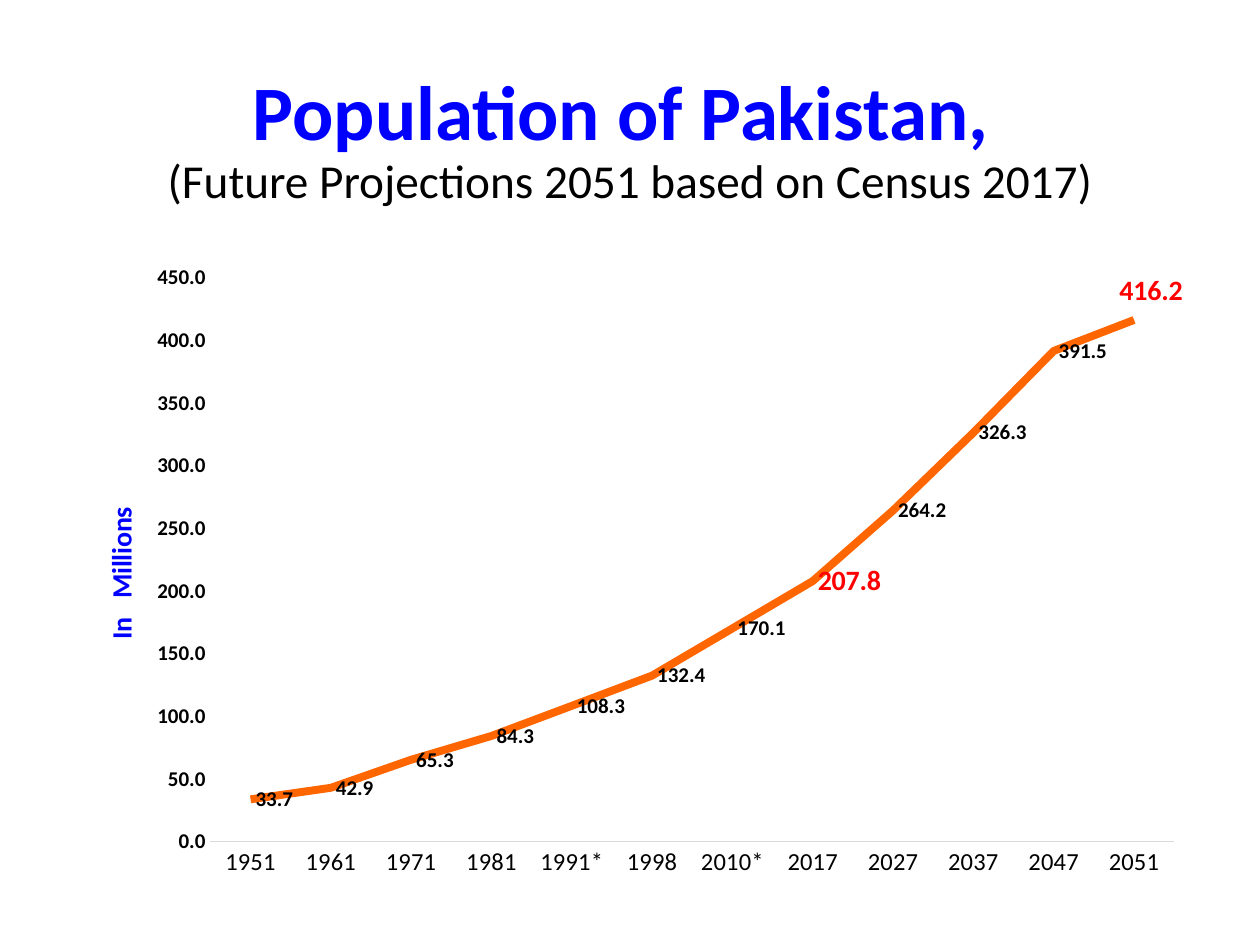
from lxml import etree
from pptx import Presentation
from pptx.chart.data import CategoryChartData
from pptx.dml.color import RGBColor
from pptx.enum.chart import XL_CHART_TYPE, XL_LABEL_POSITION, XL_TICK_MARK
from pptx.enum.text import MSO_ANCHOR, PP_ALIGN
from pptx.oxml.ns import qn
from pptx.util import Emu, Pt

LINE = XL_CHART_TYPE.LINE
RIGHT, ABOVE = XL_LABEL_POSITION.RIGHT, XL_LABEL_POSITION.ABOVE
NO_TICK = XL_TICK_MARK.NONE
CENTER, MIDDLE = PP_ALIGN.CENTER, MSO_ANCHOR.MIDDLE

FACE = "Calibri"
BLUE, BLACK, RED, ORANGE, GREY = "0000FF", "000000", "FF0000", "FF6600", "D9D9D9"
FORMAT = "#,##0.0"

HEAD = "Population of Pakistan, "
SUB = "(Future Projections 2051 based on Census 2017)"
UNIT = "In   Millions"
PEOPLE = [
    ("1951", 33.7), ("1961", 42.9), ("1971", 65.3), ("1981", 84.3),
    ("1991*", 108.3), ("1998", 132.4), ("2010*", 170.1), ("2017", 207.8),
    ("2027", 264.2), ("2037", 326.3), ("2047", 391.5), ("2051", 416.2),
]
MARKED = {"2017": RIGHT, "2051": ABOVE}
TITLE_BOX = (87, 50, 1086, 183)
CHART_BOX = (63, 252, 1134, 641)


def px(n):
    return Emu(int(n * 914400 / 126))


def paint(hue):
    return RGBColor.from_string(hue)


def style(font, size, hue=BLACK, bold=False):
    font.name, font.size, font.bold = FACE, Pt(size), bold
    font.color.rgb = paint(hue)


def write(para, text, **look):
    run = para.add_run()
    run.text = text
    style(run.font, **look)


def place(owner, index, **parts):
    for old in owner.findall(qn("c:layout")):
        owner.remove(old)
    frame = etree.Element(qn("c:layout"))
    manual = etree.SubElement(frame, qn("c:manualLayout"))
    for tag, value in parts.items():
        etree.SubElement(manual, qn("c:" + tag)).set("val", str(value))
    owner.insert(index, frame)


def add_title(slide):
    title = slide.shapes.title
    title.left, title.top, title.width, title.height = map(px, TITLE_BOX)
    frame = title.text_frame
    frame.word_wrap, frame.vertical_anchor = True, MIDDLE
    para = frame.paragraphs[0]
    para.alignment, para.line_spacing = CENTER, 0.9
    write(para, HEAD, size=44, hue=BLUE, bold=True)
    para.add_line_break()
    write(para, SUB, size=27)


def add_axes(chart):
    years, count = chart.category_axis, chart.value_axis
    for axis, size, bold in ((years, 14, False), (count, 12, True)):
        axis.major_tick_mark = axis.minor_tick_mark = NO_TICK
        axis.has_major_gridlines = False
        style(axis.tick_labels.font, size, bold=bold)
    years.format.line.color.rgb = paint(GREY)
    years.format.line.width = Pt(0.75)
    count.format.line.fill.background()
    count.minimum_scale, count.maximum_scale, count.major_unit = 0, 450, 50
    count.tick_labels.number_format = FORMAT
    count.tick_labels.number_format_is_linked = False
    frame = count.axis_title.text_frame
    write(frame.paragraphs[0], UNIT, size=16, hue=BLUE, bold=True)
    frame._txBody.bodyPr.set("rot", "-5400000")
    place(count.axis_title._element, 1, xMode="edge", yMode="edge", x=0.03, y=0.39)


def add_labels(line):
    labels = line.data_labels
    labels.show_value, labels.position = True, RIGHT
    labels.number_format, labels.number_format_is_linked = FORMAT, False
    style(labels.font, 12, bold=True)
    for index, (year, _) in enumerate(PEOPLE):
        if year in MARKED:
            label = line.points[index].data_label
            style(label.font, 16, RED, True)
            label.position = MARKED[year]
    last = line._element.findall(".//" + qn("c:dLbl"))[-1]
    place(last, 1, x=0.015, y=-0.01)


def add_graph(slide):
    data = CategoryChartData(number_format=FORMAT)
    data.categories = [year for year, _ in PEOPLE]
    data.add_series("Series 1", [value for _, value in PEOPLE])
    chart = slide.shapes.add_chart(LINE, *map(px, CHART_BOX), data).chart
    chart.has_legend = chart.has_title = False
    style(chart.font, 10)
    plot = chart.plots[0]
    plot.vary_by_categories = False
    line = plot.series[0]
    line.smooth = False
    line.format.line.color.rgb = paint(ORANGE)
    line.format.line.width = Pt(4.5)
    add_axes(chart)
    add_labels(line)
    area = chart._chartSpace.find(".//" + qn("c:plotArea"))
    place(area, 0, layoutTarget="inner", xMode="edge", yMode="edge",
          x=0.13, y=0.04, w=0.85, h=0.88)


def main():
    deck = Presentation()
    deck.slide_width, deck.slide_height = px(1260), px(945)
    slide = deck.slides.add_slide(deck.slide_layouts[5])
    add_title(slide)
    add_graph(slide)
    deck.save("out.pptx")


if __name__ == "__main__":
    main()
